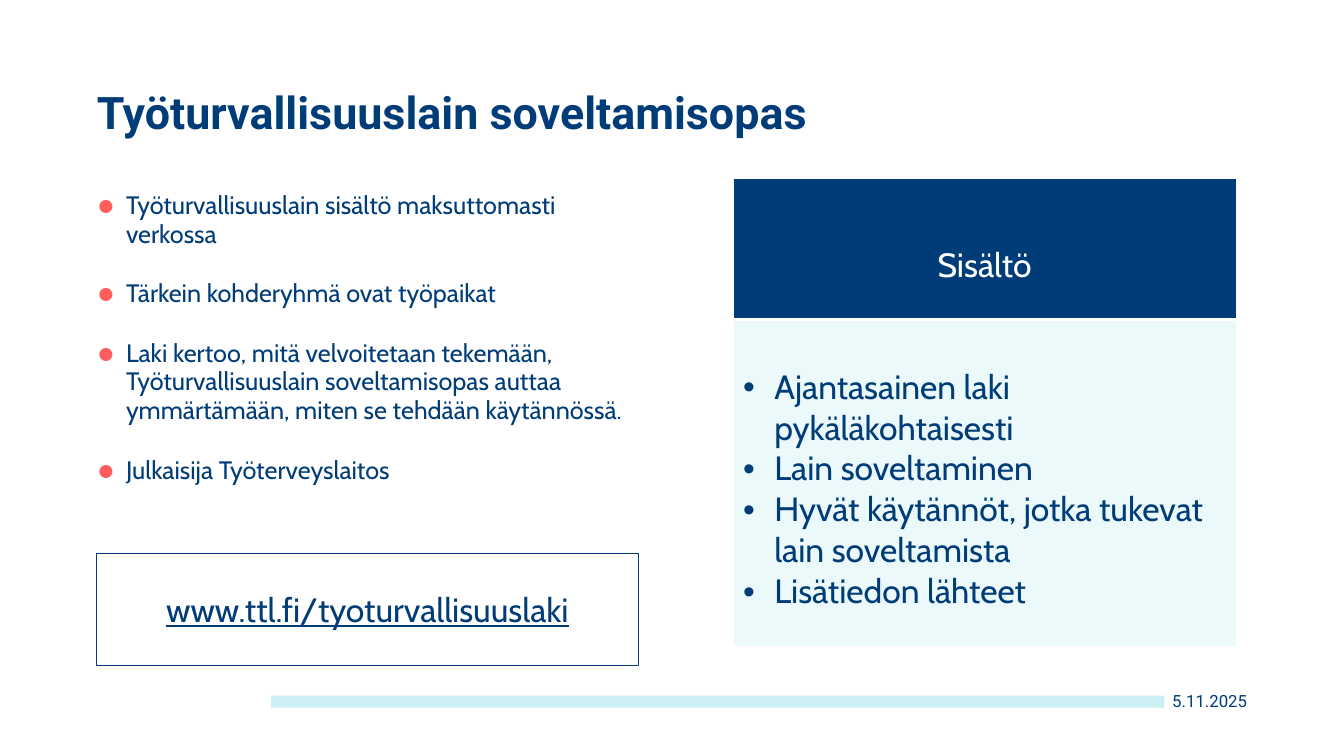
from dataclasses import dataclass

import pptx
import pptx.dml.color
import pptx.enum.shapes
import pptx.enum.text
import pptx.oxml.ns
import pptx.util
from lxml import etree

PX = 9144
HUES = {"navy": "003C78", "coral": "FF5C5C", "aqua": "CCEFF4", "pale": "ECF9FB", "white": "FFFFFF"}
ALIGN = pptx.enum.text.PP_ALIGN
ANCHOR = pptx.enum.text.MSO_ANCHOR


@dataclass(frozen=True)
class Style:
    font: str
    size: int
    hue: str = "navy"
    bold: bool = False
    line: bool = False
    align: ALIGN = ALIGN.LEFT
    space: float = 1.0
    before: int = 0
    after: int = 0


@dataclass(frozen=True)
class Bullet:
    mark: str
    indent: int
    hue: str = "navy"
    size: int = 100


@dataclass(frozen=True)
class Label:
    area: tuple[int, int, int, int]
    lines: tuple[str, ...]
    style: Style
    anchor: ANCHOR = ANCHOR.TOP
    inset: tuple[int, int, int, int] = (0, 0, 0, 0)
    bullet: Bullet | None = None


@dataclass(frozen=True)
class Row:
    height: int
    top: int
    fill: str
    lines: tuple[str, ...]
    style: Style
    edge: int
    bullet: Bullet | None = None


LABELS = (
    Label((96, 61, 1142, 76), ("Työturvallisuuslain soveltamisopas",),
          Style("Roboto", 32, bold=True, space=0.8), ANCHOR.BOTTOM),
    Label((96, 190, 571, 340), (
        "Työturvallisuuslain sisältö maksuttomasti verkossa",
        "Tärkein kohderyhmä ovat työpaikat",
        "Laki kertoo, mitä velvoitetaan tekemään, Työturvallisuuslain soveltamisopas auttaa "
        "ymmärtämään, miten se tehdään käytännössä.",
        "Julkaisija Työterveyslaitos",
    ), Style("Cabin", 18, space=0.95, before=10, after=12),
        inset=(0, 0, 39, 0), bullet=Bullet("●", 29, "coral", 120)),
    Label((957, 675, 280, 45), ("5.11.2025",), Style("Roboto", 12, align=ALIGN.RIGHT),
          ANCHOR.MIDDLE, (0, 0, 0, 4)),
)
ROWS = (
    Row(140, 66, "navy", ("Sisältö",), Style("Cabin", 24, "white", align=ALIGN.CENTER), 3),
    Row(324, 47, "pale", (
        "Ajantasainen laki pykäläkohtaisesti",
        "Lain soveltaminen",
        "Hyvät käytännöt, jotka tukevat lain soveltamista",
        "Lisätiedon lähteet",
    ), Style("Cabin", 24), 1, Bullet("•", 31)),
)


def emu(px: int) -> int:
    return px * PX


def color(hue: str) -> pptx.dml.color.RGBColor:
    return pptx.dml.color.RGBColor.from_string(HUES[hue])


def node(parent, tag: str, **attrs):
    return etree.SubElement(parent, pptx.oxml.ns.qn(tag), attrs)


def mark(para, bullet: Bullet) -> None:
    props = para._p.get_or_add_pPr()
    props.set("marL", str(emu(bullet.indent)))
    props.set("indent", str(-emu(bullet.indent)))
    node(node(props, "a:buClr"), "a:srgbClr", val=HUES[bullet.hue])
    node(props, "a:buSzPct", val=str(bullet.size * 1000))
    node(props, "a:buFont", typeface="Arial")
    node(props, "a:buChar", char=bullet.mark)


def write(frame, lines: tuple[str, ...], style: Style, bullet: Bullet | None = None) -> None:
    for i, text in enumerate(lines):
        para = frame.add_paragraph() if i else frame.paragraphs[0]
        para.text = text
        if bullet:
            mark(para, bullet)
        para.alignment = style.align
        para.line_spacing = style.space
        para.space_before = pptx.util.Pt(style.before if i else 0)
        para.space_after = pptx.util.Pt(style.after)
        font = para.font
        font.name = style.font
        font.size = pptx.util.Pt(style.size)
        font.bold = style.bold
        font.underline = style.line
        font.color.rgb = color(style.hue)


def label(slide, item: Label) -> None:
    frame = slide.shapes.add_textbox(*map(emu, item.area)).text_frame
    frame.word_wrap = True
    frame.vertical_anchor = item.anchor
    (frame.margin_left, frame.margin_top,
     frame.margin_right, frame.margin_bottom) = map(emu, item.inset)
    write(frame, item.lines, item.style, item.bullet)


def block(slide, area: tuple[int, int, int, int]):
    kind = pptx.enum.shapes.MSO_SHAPE.RECTANGLE
    shape = slide.shapes.add_shape(kind, *map(emu, area))
    shape.shadow.inherit = False
    return shape


def bar(slide) -> None:
    shape = block(slide, (269, 690, 886, 12))
    shape.fill.solid()
    shape.fill.fore_color.rgb = color("aqua")
    shape.line.fill.background()


def link(slide) -> None:
    shape = block(slide, (96, 549, 537, 111))
    shape.fill.background()
    shape.line.color.rgb = color("navy")
    shape.line.width = pptx.util.Pt(0.75)
    shape.text_frame.word_wrap = True
    shape.text_frame.vertical_anchor = ANCHOR.MIDDLE
    write(shape.text_frame, ("www.ttl.fi/tyoturvallisuuslaki",),
          Style("Cabin", 24, line=True, align=ALIGN.CENTER))


def border(cell, edge: int) -> None:
    props = cell._tc.get_or_add_tcPr()
    for side, width in (("L", 1), ("R", 1), ("T", 1), ("B", edge)):
        line = node(props, f"a:ln{side}", w=str(pptx.util.Pt(width)))
        node(node(line, "a:solidFill"), "a:srgbClr", val=HUES["white"])


def table(slide, rows: tuple[Row, ...]) -> None:
    height = sum(row.height for row in rows)
    grid = slide.shapes.add_table(len(rows), 1, *map(emu, (727, 177, 499, height))).table
    grid.horz_banding = False
    for i, row in enumerate(rows):
        grid.rows[i].height = emu(row.height)
        cell = grid.cell(i, 0)
        cell.margin_top = emu(row.top)
        border(cell, row.edge)
        cell.fill.solid()
        cell.fill.fore_color.rgb = color(row.fill)
        write(cell.text_frame, row.lines, row.style, row.bullet)


def main() -> None:
    deck = pptx.Presentation()
    deck.slide_width, deck.slide_height = emu(1333), emu(750)
    slide = deck.slides.add_slide(deck.slide_layouts[6])
    bar(slide)
    for item in LABELS:
        label(slide, item)
    table(slide, ROWS)
    link(slide)
    deck.save("out.pptx")


if __name__ == "__main__":
    main()
